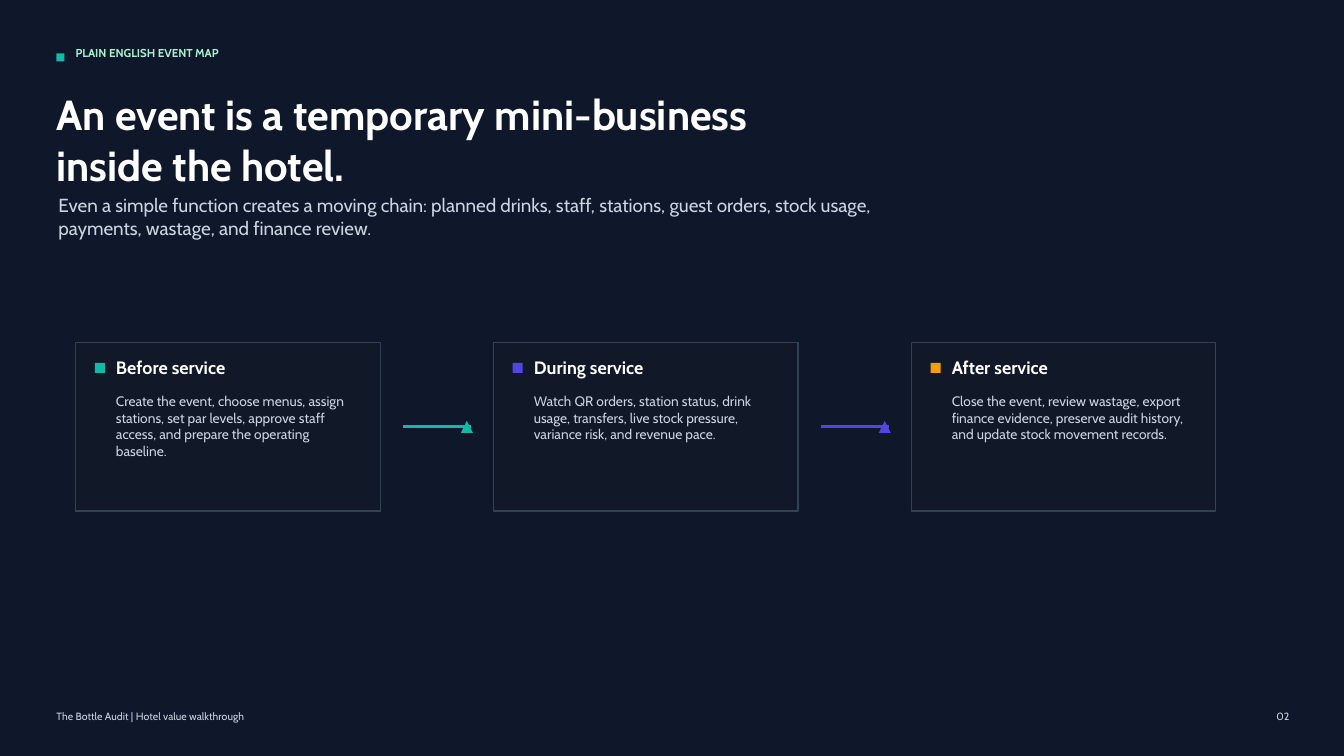
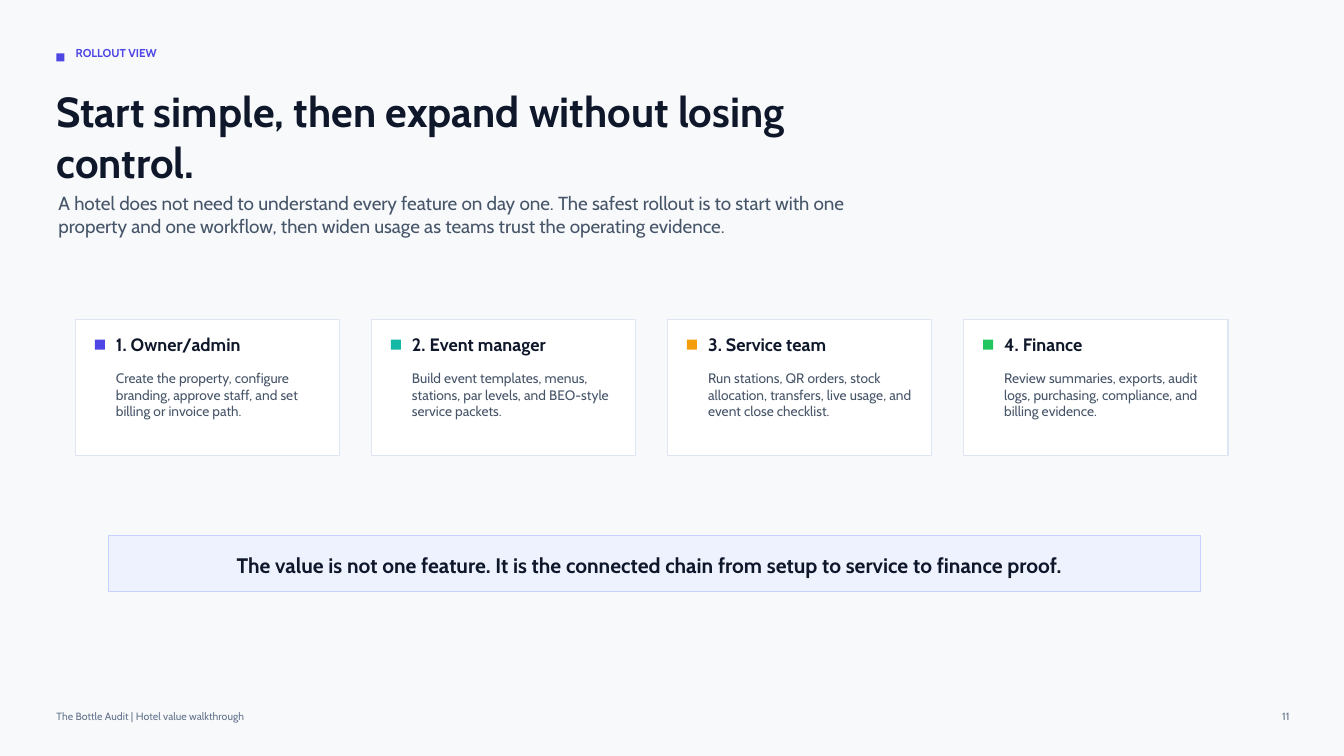
from dataclasses import dataclass

from lxml import etree
from pptx import Presentation
from pptx.dml.color import RGBColor
from pptx.enum.shapes import MSO_CONNECTOR, MSO_SHAPE
from pptx.enum.text import MSO_ANCHOR, MSO_AUTO_SIZE, PP_ALIGN
from pptx.oxml.ns import qn
from pptx.util import Inches, Pt

# Colours
NAVY = RGBColor(0x0F, 0x17, 0x2A)
INK = RGBColor(0x11, 0x18, 0x27)
WHITE = RGBColor(0xFF, 0xFF, 0xFF)
MIST = RGBColor(0xF7, 0xF9, 0xFB)
SLATE = RGBColor(0x33, 0x41, 0x55)
SLATE_MID = RGBColor(0x47, 0x55, 0x69)
SLATE_SOFT = RGBColor(0x64, 0x74, 0x8B)
SILVER = RGBColor(0xCB, 0xD5, 0xE1)
PALE_BLUE = RGBColor(0xDD, 0xE6, 0xF2)
LAVENDER = RGBColor(0xEE, 0xF2, 0xFF)
LAVENDER_EDGE = RGBColor(0xC7, 0xD2, 0xFE)
MINT = RGBColor(0xA7, 0xF3, 0xD0)
TEAL = RGBColor(0x14, 0xB8, 0xA6)
INDIGO = RGBColor(0x4F, 0x46, 0xE5)
AMBER = RGBColor(0xF5, 0x9E, 0x0B)
GREEN = RGBColor(0x22, 0xC5, 0x5E)

# Text formats
FONT = "Cabin"
FOOTER = {"size": Pt(7.5), "bold": False}
KICKER = {"size": Pt(8.2), "bold": True}
TITLE = {"size": Pt(30), "bold": True}
INTRO = {"size": Pt(13.5), "bold": False}
CARD_HEAD = {"size": Pt(12.8), "bold": True}
CARD_BODY = {"size": Pt(9.8), "bold": False}
BANNER = {"size": Pt(15), "bold": True}

SLIDE_W, SLIDE_H = 13.33, 7.5
MARGIN = 0.56
CARDS_LEFT = 0.75
FOOTER_TEXT = "The Bottle Audit | Hotel value walkthrough"


@dataclass
class Theme:
    background: RGBColor
    heading: RGBColor
    body: RGBColor
    footer: RGBColor
    card: RGBColor
    card_edge: RGBColor


DARK = Theme(NAVY, WHITE, SILVER, SILVER, INK, SLATE)
LIGHT = Theme(MIST, NAVY, SLATE_MID, SLATE_SOFT, WHITE, PALE_BLUE)

STAGES = [
    (TEAL, "Before service",
     "Create the event, choose menus, assign stations, set par levels, "
     "approve staff access, and prepare the operating baseline."),
    (INDIGO, "During service",
     "Watch QR orders, station status, drink usage, transfers, "
     "live stock pressure, variance risk, and revenue pace."),
    (AMBER, "After service",
     "Close the event, review wastage, export finance evidence, "
     "preserve audit history, and update stock movement records."),
]
ROLES = [
    (INDIGO, "1. Owner/admin",
     "Create the property, configure branding, approve staff, "
     "and set billing or invoice path."),
    (TEAL, "2. Event manager",
     "Build event templates, menus, stations, par levels, "
     "and BEO-style service packets."),
    (AMBER, "3. Service team",
     "Run stations, QR orders, stock allocation, transfers, "
     "live usage, and event close checklist."),
    (GREEN, "4. Finance",
     "Review summaries, exports, audit logs, purchasing, "
     "compliance, and billing evidence."),
]


# Basic elements
def write(holder, text, style, color, align=PP_ALIGN.LEFT,
          anchor=MSO_ANCHOR.TOP, insets=(0, 0, 0, 0)):
    frame = holder.text_frame
    left, top, right, bottom = (Inches(inset) for inset in insets)
    frame_format = {
        "word_wrap": True, "auto_size": MSO_AUTO_SIZE.NONE,
        "vertical_anchor": anchor, "margin_left": left, "margin_top": top,
        "margin_right": right, "margin_bottom": bottom,
    }
    for name, value in frame_format.items():
        setattr(frame, name, value)
    paragraph = frame.paragraphs[0]
    paragraph.alignment = align
    run = paragraph.add_run()
    run.text = text
    for name, value in {"name": FONT, **style}.items():
        setattr(run.font, name, value)
    run.font.color.rgb = color


def add_text(slide, box, text, style, color, align=PP_ALIGN.LEFT):
    label = slide.shapes.add_textbox(*map(Inches, box))
    write(label, text, style, color, align)


def add_block(slide, box, fill, edge=None, kind=MSO_SHAPE.RECTANGLE):
    block = slide.shapes.add_shape(kind, *map(Inches, box))
    block.shadow.inherit = False
    block.fill.solid()
    block.fill.fore_color.rgb = fill
    if edge is None:
        block.line.fill.background()
    else:
        block.line.color.rgb = edge
        block.line.width = Pt(0.75)
    return block


# Shared slide frame: background, footer, kicker, title and intro
def add_framed_slide(deck, theme, number, kicker, title, title_box,
                     intro, intro_box):
    kicker_text, marker_color, kicker_color = kicker
    slide = deck.slides.add_slide(deck.slide_layouts.get_by_name("Title Only"))
    slide.background.fill.solid()
    slide.background.fill.fore_color.rgb = theme.background

    heading = slide.shapes.title
    names = ("left", "top", "width", "height")
    for name, value in zip(names, title_box):
        setattr(heading, name, Inches(value))
    write(heading, title, TITLE, theme.heading)

    add_text(slide, (MARGIN, 7.04, 4.79, 0.19), FOOTER_TEXT, FOOTER, theme.footer)
    add_text(slide, (12.08, 7.04, 0.71, 0.19), number, FOOTER, theme.footer,
             PP_ALIGN.RIGHT)
    add_block(slide, (MARGIN, 0.53, 0.08, 0.08), marker_color)
    add_text(slide, (0.75, 0.46, 5.42, 0.23), kicker_text, KICKER, kicker_color)
    add_text(slide, intro_box, intro, INTRO, theme.body)
    return slide


# Cards and arrows
def add_card(slide, theme, box, accent, heading, body):
    left, top, width, height = box
    text_left, text_width = left + 0.4, width - 0.58
    add_block(slide, box, theme.card, theme.card_edge)
    add_block(slide, (left + 0.19, top + 0.2, 0.1, 0.1), accent)
    add_text(slide, (text_left, top + 0.14, text_width, 0.27), heading,
             CARD_HEAD, theme.heading)
    add_text(slide, (text_left, top + 0.5, text_width, height - 0.65), body,
             CARD_BODY, theme.body)


def add_card_row(slide, theme, cards, top, right, width, height):
    """Spread the cards evenly and return their left edges."""
    step = (right - width - CARDS_LEFT) / (len(cards) - 1)
    lefts = [CARDS_LEFT + index * step for index in range(len(cards))]
    for left, card in zip(lefts, cards):
        add_card(slide, theme, (left, top, width, height), *card)
    return lefts


def add_flow_arrow(slide, left, middle, color):
    length, tip = 0.67, 0.12
    shaft = slide.shapes.add_connector(
        MSO_CONNECTOR.STRAIGHT, Inches(left), Inches(middle),
        Inches(left + length), Inches(middle))
    shaft.line.color.rgb = color
    shaft.line.width = Pt(2.25)
    etree.SubElement(shaft._element.spPr, qn("a:effectLst"))
    add_block(slide, (left + 0.57, middle - tip / 2, tip, tip), color,
              kind=MSO_SHAPE.ISOSCELES_TRIANGLE)


# Slides
def build_event_map(deck):
    slide = add_framed_slide(
        deck, DARK, "02", ("PLAIN ENGLISH EVENT MAP", TEAL, MINT),
        "An event is a temporary mini-business inside the hotel.",
        (MARGIN, 0.88, 7.92, 0.92),
        "Even a simple function creates a moving chain: planned drinks, staff, "
        "stations, guest orders, stock usage, payments, wastage, and finance review.",
        (0.58, 1.92, 8.12, 0.69))
    top, width, height = 3.4, 3.02, 1.67
    lefts = add_card_row(slide, DARK, STAGES, top, 12.06, width, height)
    for left, (accent, _, _) in zip(lefts[:-1], STAGES):
        add_flow_arrow(slide, left + width + 0.23, top + height / 2, accent)


def build_rollout(deck):
    slide = add_framed_slide(
        deck, LIGHT, "11", ("ROLLOUT VIEW", INDIGO, INDIGO),
        "Start simple, then expand without losing control.",
        (MARGIN, 0.85, 7.5, 0.94),
        "A hotel does not need to understand every feature on day one. The safest "
        "rollout is to start with one property and one workflow, then widen usage "
        "as teams trust the operating evidence.",
        (0.58, 1.9, 7.92, 0.67))
    add_card_row(slide, LIGHT, ROLES, 3.17, 12.18, 2.62, 1.35)
    banner = add_block(slide, (1.08, 5.31, 10.83, 0.56), LAVENDER, LAVENDER_EDGE)
    write(banner,
          "The value is not one feature. It is the connected chain from setup "
          "to service to finance proof.",
          BANNER, NAVY, PP_ALIGN.CENTER, MSO_ANCHOR.MIDDLE, (0.36, 0.03, 0.47, 0))


def main():
    deck = Presentation()
    deck.slide_width, deck.slide_height = Inches(SLIDE_W), Inches(SLIDE_H)
    build_event_map(deck)
    build_rollout(deck)
    deck.save("out.pptx")


if __name__ == "__main__":
    main()
